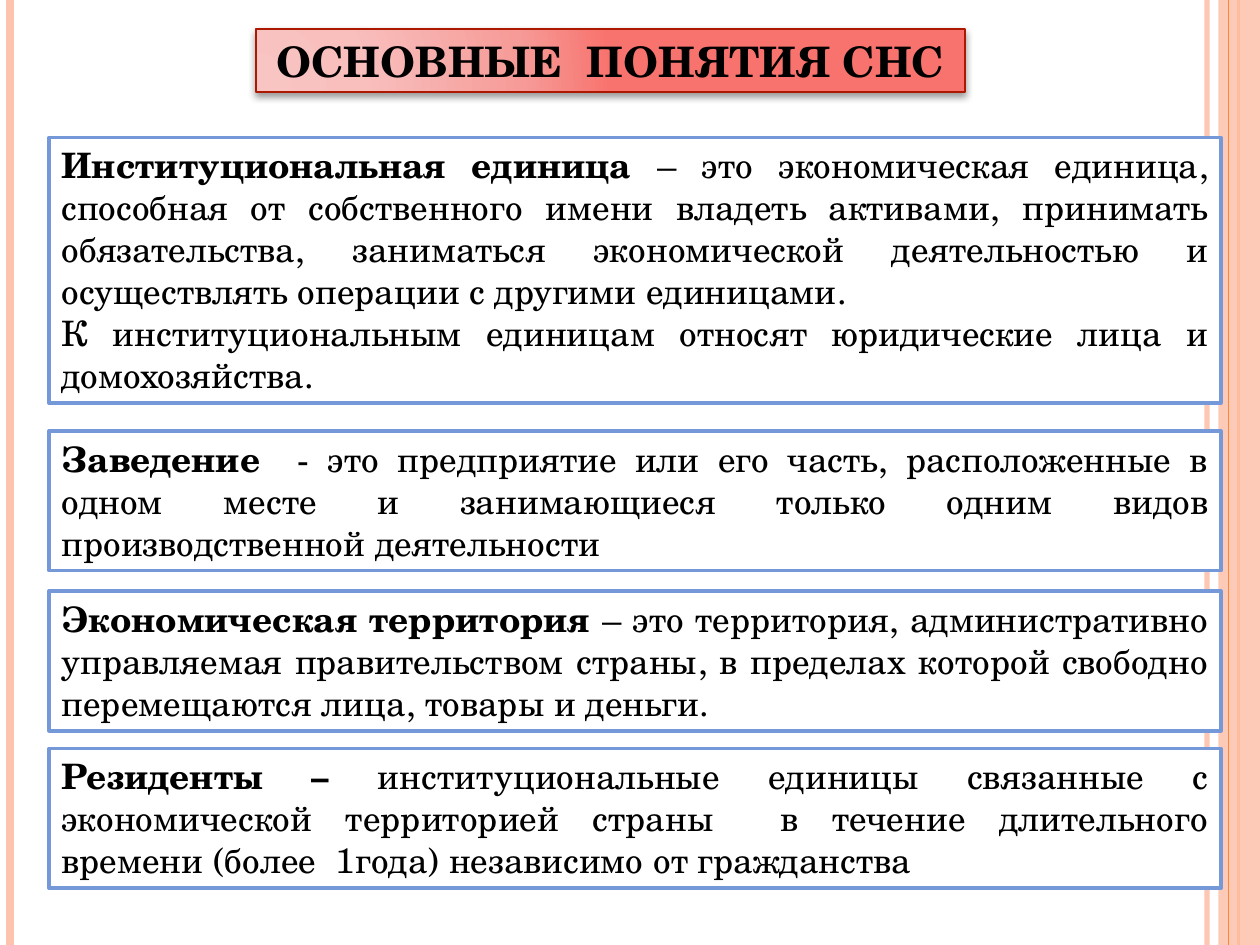
"""Build the slide on the basic concepts of the SNA."""
from typing import NamedTuple

from lxml import etree
from pptx import Presentation
from pptx import util as u
from pptx.dml import color
from pptx.enum import shapes, text
from pptx.oxml import ns, parse_xml

FONT = "TeX Gyre Schola"
PEACH, ORANGE = "FEC3AE", "FE8637"


class Rule(NamedTuple):
    x: float
    hue: str
    width: float
    alpha: int = 100


class Card(NamedTuple):
    top: float
    height: float
    term: str
    body: str
    extra: str = ""


RULES = [Rule(9.58, PEACH, 3, 93), Rule(0.08, PEACH, 4.5), Rule(9.83, ORANGE, 1.5)]
EDGE = Rule(9.75, ORANGE, 0.75)
STOPS = [(0, "F8C5C3"), (30, "F8BFBD"), (75, "F69B98"), (100, "F8736E")]
CARDS = [
    Card(1.09, 2.11, "Институциональная единица ",
         "– это экономическая единица, способная от собственного имени владеть активами, "
         "принимать обязательства, заниматься экономической деятельностью и осуществлять "
         "операции с другими единицами.",
         "К институциональным единицам относят юридические лица и домохозяйства."),
    Card(3.42, 1.11, "Заведение ",
         " - это предприятие или его часть, расположенные в одном месте и занимающиеся "
         "только одним видов производственной деятельности"),
    Card(4.69, 1.11, "Экономическая территория ",
         "– это территория, административно управляемая правительством страны, в пределах "
         "которой свободно перемещаются лица, товары и деньги."),
    Card(5.94, 1.11, "Резиденты – ",
         "институциональные единицы связанные с экономической территорией страны  в течение "
         "длительного времени (более  1года) независимо от гражданства"),
]


def paint(target, hue: str, alpha: int = 100) -> None:
    target.solid()
    target.fore_color.rgb = color.RGBColor.from_string(hue)
    if alpha < 100:
        tint = target._xPr.find(".//" + ns.qn("a:srgbClr"))
        etree.SubElement(tint, ns.qn("a:alpha"), val=str(alpha * 1000))


def draw_rule(slide, rule: Rule) -> None:
    x = u.Inches(rule.x)
    line = slide.shapes.add_connector(shapes.MSO_CONNECTOR.STRAIGHT, x, 0, x, u.Inches(7.5))
    line.line.width = u.Pt(rule.width)
    paint(line.line.fill, rule.hue, rule.alpha)
    etree.SubElement(line._element.spPr, ns.qn("a:effectLst"))


def draw_box(slide, left: float, top: float, width: float, height: float,
             fill: str, edge: str = "", weight: float = 1, alpha: int = 100):
    box = slide.shapes.add_shape(shapes.MSO_SHAPE.RECTANGLE, u.Inches(left), u.Inches(top),
                                 u.Inches(width), u.Inches(height))
    box.shadow.inherit = False
    paint(box.fill, fill, alpha)
    if edge:
        paint(box.line.fill, edge)
        box.line.width = u.Pt(weight)
    else:
        box.line.fill.background()
    frame = box.text_frame
    frame.word_wrap = True
    frame.vertical_anchor = text.MSO_ANCHOR.TOP
    return box


def style(para, size: int, align) -> None:
    para.alignment = align
    para.font.name = FONT
    para.font.size = u.Pt(size)
    para.font.color.rgb = color.RGBColor.from_string("000000")


def draw_title(slide) -> None:
    box = draw_box(slide, 2.03, 0.23, 5.63, 0.5, STOPS[-1][1], "AC1800")
    props = box._element.spPr
    stops = "".join(f'<a:gs pos="{pos * 1000}"><a:srgbClr val="{hue}"/></a:gs>'
                    for pos, hue in STOPS)
    blend = parse_xml(
        f'<a:gradFill {ns.nsdecls("a")} rotWithShape="1"><a:gsLst>{stops}</a:gsLst>'
        '<a:path path="circle"><a:fillToRect l="5000" t="100000" r="120000" b="10000"/>'
        '</a:path></a:gradFill>')
    props.replace(props.find(ns.qn("a:solidFill")), blend)
    props.find(ns.qn("a:effectLst")).append(parse_xml(
        f'<a:outerShdw {ns.nsdecls("a")} blurRad="{u.Pt(4)}" dist="{u.Pt(2)}" dir="5400000" '
        'rotWithShape="0"><a:srgbClr val="000000"><a:alpha val="40000"/></a:srgbClr>'
        '</a:outerShdw>'))
    para = box.text_frame.paragraphs[0]
    para.text = "ОСНОВНЫЕ  ПОНЯТИЯ СНС"
    style(para, 24, text.PP_ALIGN.CENTER)
    para.font.bold = True


def draw_card(slide, card: Card) -> None:
    frame = draw_box(slide, 0.39, card.top, 9.3, card.height, "FFFFFF", "7598D9", 2).text_frame
    para = frame.paragraphs[0]
    term = para.add_run()
    term.text = card.term
    term.font.bold = True
    para.add_run().text = card.body
    if card.extra:
        frame.add_paragraph().text = card.extra
    for para in frame.paragraphs:
        style(para, 20, text.PP_ALIGN.JUSTIFY)


def main() -> None:
    deck = Presentation()
    deck.slide_width, deck.slide_height = u.Inches(10), u.Inches(7.5)
    slide = deck.slides.add_slide(deck.slide_layouts[6])
    for rule in RULES:
        draw_rule(slide, rule)
    draw_box(slide, 9.67, 0, 0.33, 7.5, PEACH, alpha=87)
    draw_rule(slide, EDGE)
    draw_title(slide)
    for card in CARDS:
        draw_card(slide, card)
    deck.save("out.pptx")


if __name__ == "__main__":
    main()
